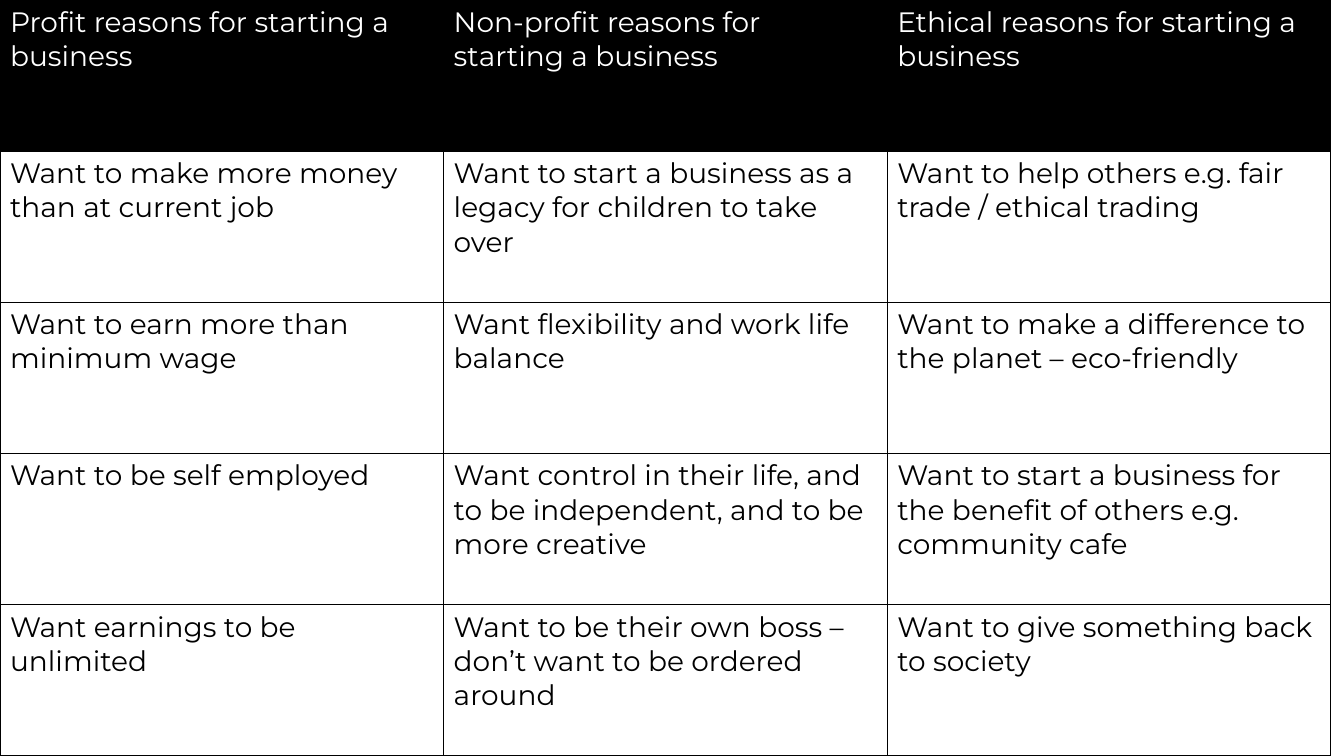
"""Build a slide with a table of reasons for starting a business."""
from lxml.etree import SubElement
from pptx import Presentation
from pptx.dml.color import RGBColor
from pptx.oxml.ns import qn
from pptx.util import Inches, Pt

BLACK, WHITE = "000000", "FFFFFF"
ROWS = [
    ("Profit reasons for starting a business",
     "Non-profit reasons for starting a business",
     "Ethical reasons for starting a business"),
    ("Want to make more money than at current job",
     "Want to start a business as a legacy for children to take over",
     "Want to help others e.g. fair trade / ethical trading"),
    ("Want to earn more than minimum wage",
     "Want flexibility and work life balance",
     "Want to make a difference to the planet – eco-friendly"),
    ("Want to be self employed",
     "Want control in their life, and to be independent, and to be more creative",
     "Want to start a business for the benefit of others e.g. community cafe"),
    ("Want earnings to be unlimited",
     "Want to be their own boss – don’t want to be ordered around",
     "Want to give something back to society"),
]


def rgb(color):
    return RGBColor.from_string(color)


def write(tf, text, size=20, font="Montserrat", color=BLACK):
    r = tf.paragraphs[0].add_run()
    r.text = text
    r.font.size = Pt(size)
    r.font.name = font
    r.font.color.rgb = rgb(color)


prs = Presentation()
prs.slide_width, prs.slide_height = Inches(13.33), Inches(7.5)
slide = prs.slides.add_slide(prs.slide_layouts[6])

table = slide.shapes.add_table(len(ROWS), len(ROWS[0]), Inches(0), Inches(0),
                               Inches(13.2), Inches(7.5)).table
for column in table.columns:
    column.width = Inches(4.4)
for row in table.rows:
    row.height = Inches(1.5)

for i, reasons in enumerate(ROWS):
    fill, color = (BLACK, WHITE) if i == 0 else (WHITE, BLACK)
    for j, reason in enumerate(reasons):
        cell = table.cell(i, j)
        tcPr = cell._tc.get_or_add_tcPr()
        for side in ("a:lnL", "a:lnR", "a:lnT", "a:lnB"):
            ln = SubElement(tcPr, qn(side), w=str(Pt(1)))
            solid = SubElement(ln, qn("a:solidFill"))
            SubElement(solid, qn("a:srgbClr"), val=BLACK)
        cell.fill.solid()
        cell.fill.fore_color.rgb = rgb(fill)
        write(cell.text_frame, reason, color=color)

prs.save("out.pptx")
